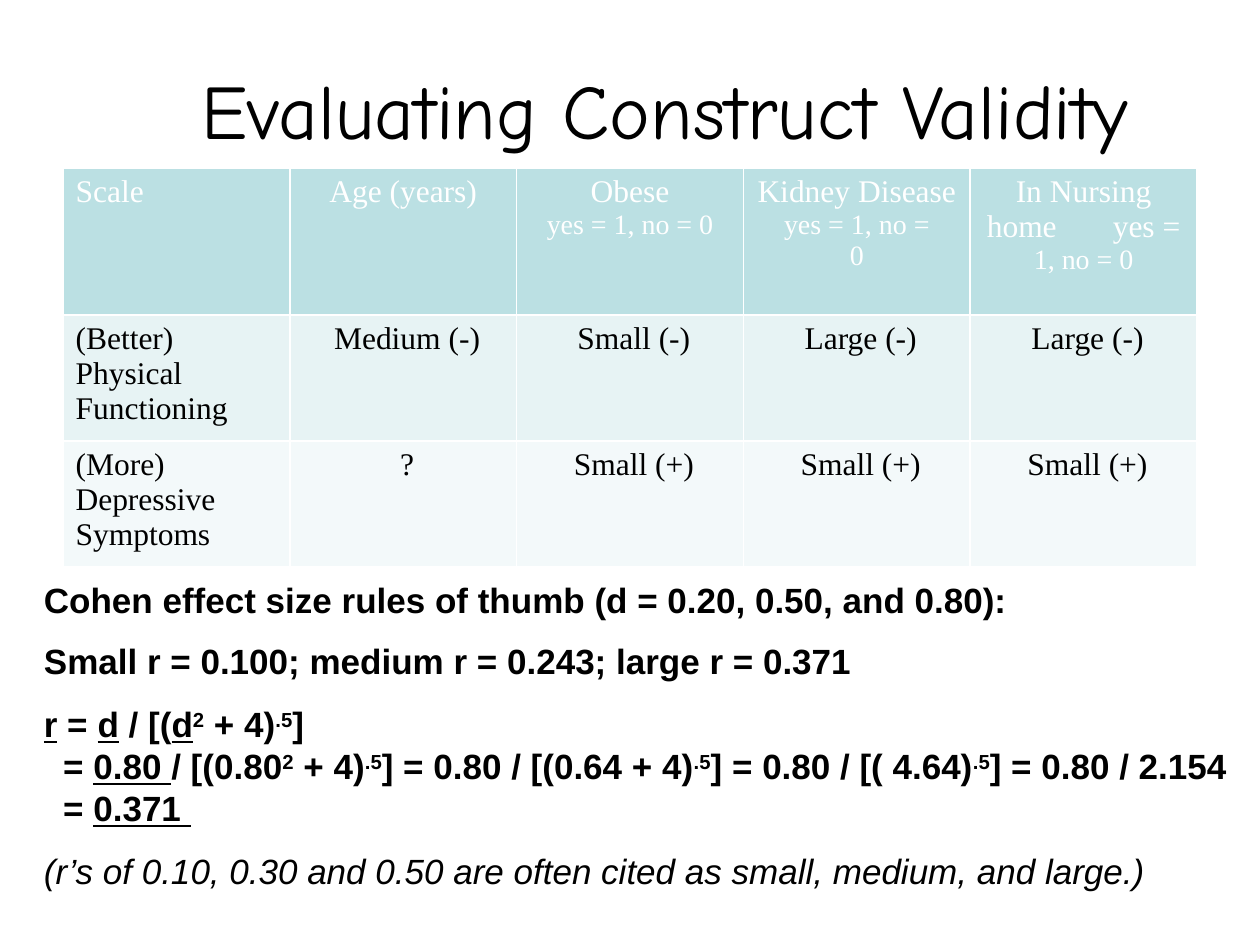
from typing import NamedTuple

from pptx import Presentation
from pptx.dml.color import RGBColor
from pptx.enum.text import MSO_ANCHOR, PP_ALIGN
from pptx.util import Pt

BLACK, WHITE = "000000", "FFFFFF"
HEADER_FILL = "BBE0E3"
BODY_FILLS = ("E7F3F4", "F3F9FA")


class Run(NamedTuple):
    text: str
    underline: bool = False
    superscript: bool = False


class Line(NamedTuple):
    runs: list[Run]
    before: float = 0
    indent: float = 0
    bold: bool = True


def set_font(font, name: str, size: float, color: str = BLACK) -> None:
    font.name, font.size = name, Pt(size)
    font.color.rgb = RGBColor.from_string(color)


def add_text_box(slide, left: float, top: float, width: float, height: float):
    tf = slide.shapes.add_textbox(Pt(left), Pt(top), Pt(width), Pt(height)).text_frame
    tf.word_wrap = True
    return tf


def add_line(p, line: Line) -> None:
    set_font(p.font, "Arial", 20)
    p.font.bold, p.font.italic = line.bold, not line.bold
    p.space_before = Pt(line.before)
    if line.indent:
        p._p.get_or_add_pPr().set("marL", str(Pt(line.indent)))
    for part in line.runs:
        r = p.add_run()
        r.text = part.text
        if part.underline:
            r.font.underline = True
        if part.superscript:
            r._r.get_or_add_rPr().set("baseline", "30000")


def fill_cell(cell, lines: tuple[str, ...], fill: str, color: str, centered: bool) -> None:
    """Write 18 pt text; coding notes such as "yes = 1" are 16 pt."""
    cell.fill.solid()
    cell.fill.fore_color.rgb = RGBColor.from_string(fill)
    p = cell.text_frame.paragraphs[0]
    p.alignment = PP_ALIGN.CENTER if centered else PP_ALIGN.LEFT
    set_font(p.font, "Times New Roman", 18, color)
    for i, text in enumerate(lines):
        if i:
            p.add_line_break()
        r = p.add_run()
        r.text = text
        set_font(r.font, "Times New Roman", 16 if i and "home" not in text else 18, color)


HEADERS = [
    ("Scale",),
    ("Age (years)",),
    ("Obese", "yes = 1, no = 0"),
    ("Kidney Disease", "yes = 1, no =", "0"),
    ("In Nursing", "home\tyes =", "1, no = 0"),
]
BODY = [
    ["(Better) Physical Functioning", " Medium (-)", " Small (-)", " Large (-)", " Large (-)"],
    ["(More) Depressive Symptoms", " ?", " Small (+)", " Small (+)", " Small (+)"],
]

SQUARED = Run("2", superscript=True)
ROOT = Run(".5", superscript=True)
NOTES = [
    Line([Run("Cohen effect size rules of thumb (d = 0.20, 0.50, and 0.80):")]),
    Line([Run("Small r = 0.100; medium r = 0.243; large r = 0.371")], before=11),
    Line([Run("r", True), Run(" = "), Run("d", True), Run(" / [("), Run("d", True),
          SQUARED, Run(" + 4)"), ROOT, Run("]")], before=12),
    Line([Run("= "), Run("0.80 ", True), Run("/ [(0.80"), SQUARED, Run(" + 4)"), ROOT,
          Run("] = 0.80 / [(0.64 + 4)"), ROOT, Run("] = 0.80 / [( 4.64)"), ROOT,
          Run("] = 0.80 / 2.154")], indent=11),
    Line([Run("= "), Run("0.371 ", True)], indent=11),
    Line([Run("(r’s of 0.10, 0.30 and 0.50 are often cited as small, medium, and large.)")],
         before=12, bold=False),
]


def main() -> None:
    prs = Presentation()
    prs.slide_width, prs.slide_height = Pt(720), Pt(540)
    s = prs.slides.add_slide(prs.slide_layouts[6])

    # Title
    tf = add_text_box(s, 40, 12, 680, 100)
    tf.vertical_anchor = MSO_ANCHOR.MIDDLE
    p = tf.paragraphs[0]
    p.text = "Evaluating Construct Validity"
    p.alignment = PP_ALIGN.CENTER
    set_font(p.font, "Comic Neue", 44)

    # Expected correlations; the default table style draws the white rules
    table = s.shapes.add_table(3, 5, Pt(36), Pt(96), Pt(648), Pt(202)).table
    for row, height in zip(table.rows, (84, 59, 59)):
        row.height = Pt(height)
    for col, lines in enumerate(HEADERS):
        fill_cell(table.cell(0, col), lines, HEADER_FILL, WHITE, col > 0)
    for row, (texts, fill) in enumerate(zip(BODY, BODY_FILLS), start=1):
        for col, text in enumerate(texts):
            fill_cell(table.cell(row, col), (text,), fill, BLACK, col > 0)

    # Effect size rules and worked formula
    tf = add_text_box(s, 18, 327, 702, 189)
    for i, line in enumerate(NOTES):
        add_line(tf.add_paragraph() if i else tf.paragraphs[0], line)

    prs.save("out.pptx")


if __name__ == "__main__":
    main()
